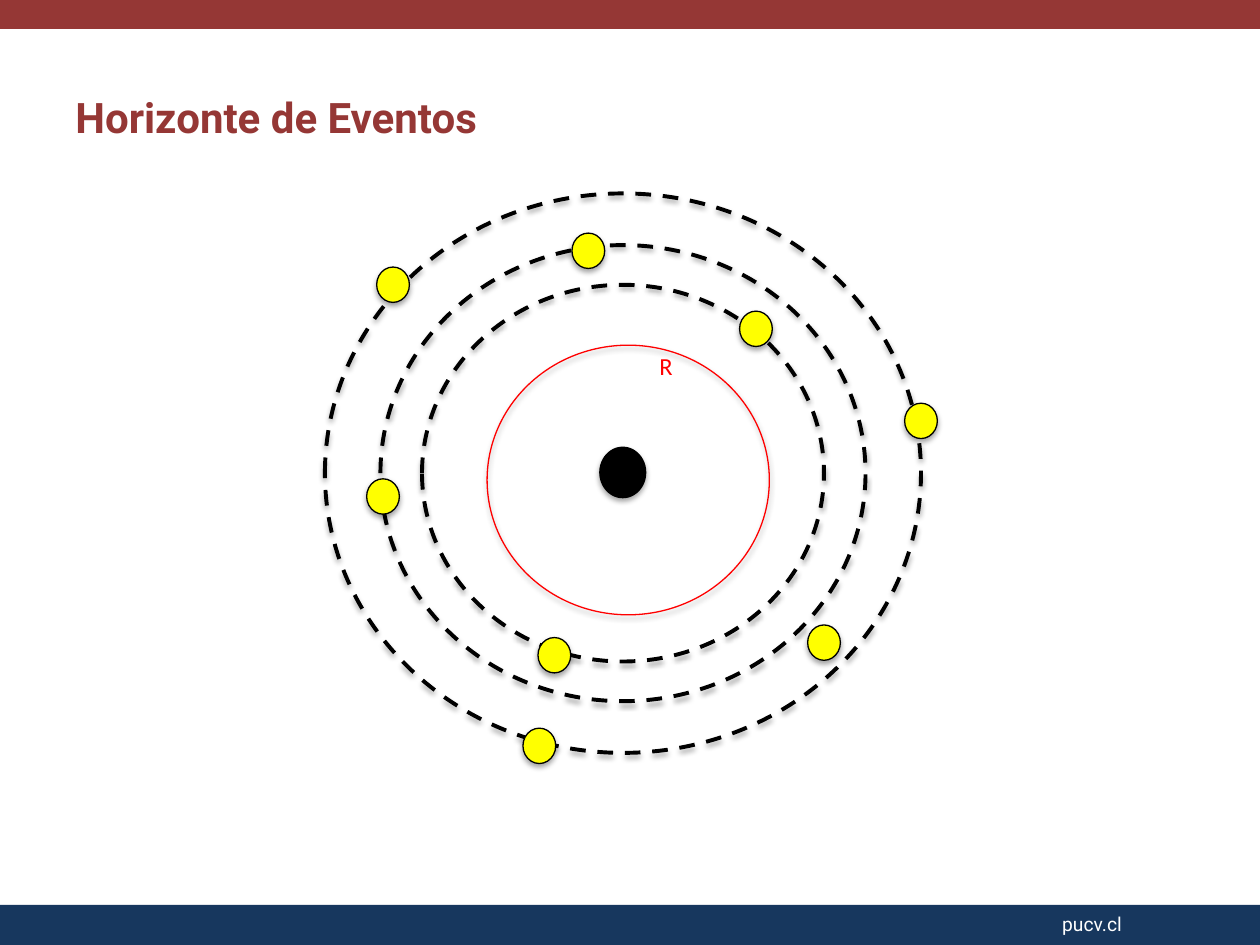
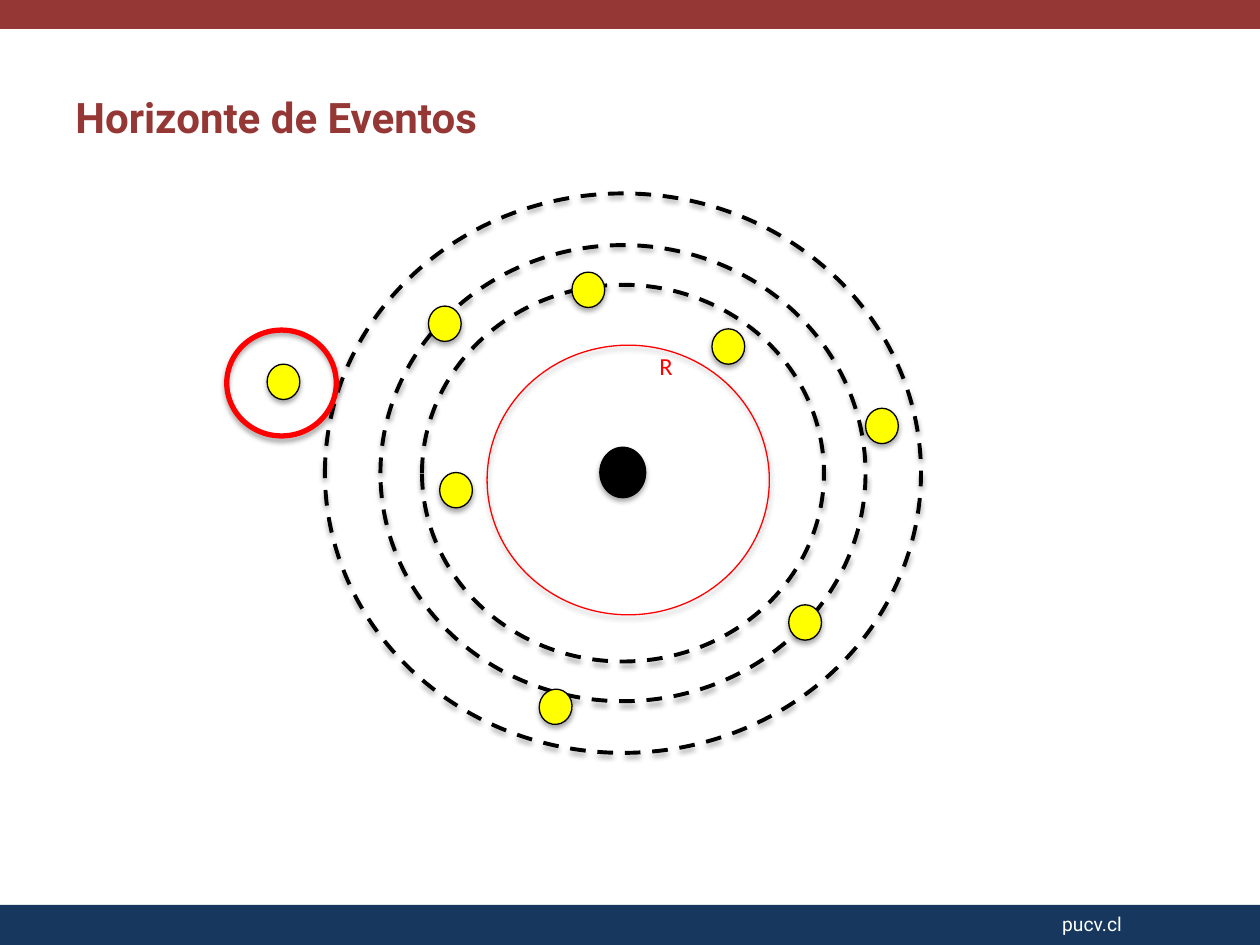
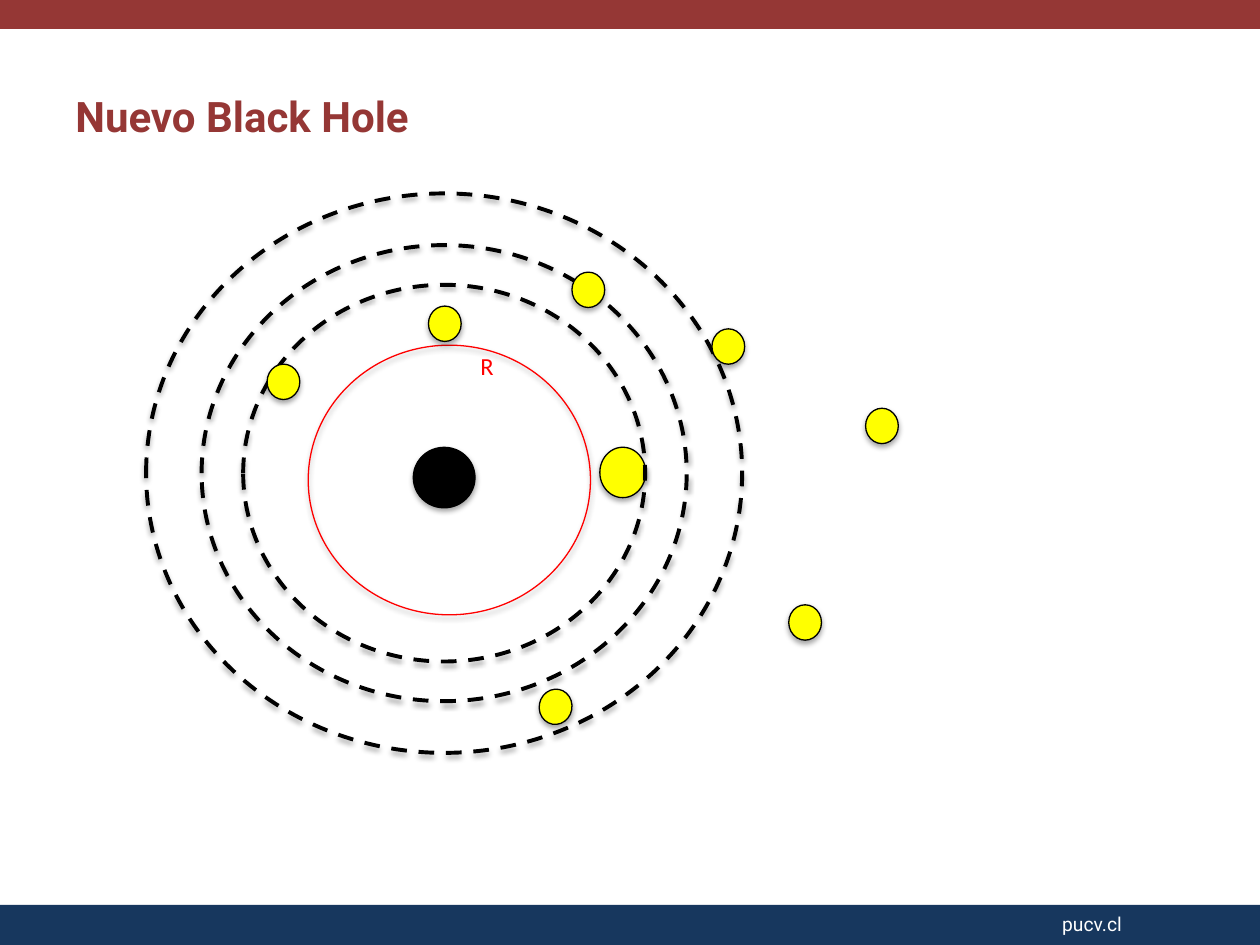
from lxml import etree
from pptx import Presentation
from pptx.dml.color import RGBColor
from pptx.enum.dml import MSO_LINE
from pptx.enum.shapes import MSO_SHAPE
from pptx.enum.text import PP_ALIGN
from pptx.oxml.ns import qn
from pptx.util import Pt

RECT, OVAL = MSO_SHAPE.RECTANGLE, MSO_SHAPE.OVAL
DASH = MSO_LINE.DASH
LEFT, CENTER = PP_ALIGN.LEFT, PP_ALIGN.CENTER

COLORS = {
    "maroon": "953735", "navy": "17375E", "white": "FFFFFF",
    "black": "000000", "red": "FF0000", "yellow": "FFFF00",
}
RGB = {name: RGBColor.from_string(value) for name, value in COLORS.items()}

STAR = (18.7, 20.2)
HOLE = (26.2, 28.8)
HOLE_CENTER = (355.9, 270)
HORIZON_CENTER = (359, 274.3)
HORIZON = (161.3, 154.1)
ORBIT_CENTER = (356, 270.4)
ORBITS = [(229.7, 215.3), (277.2, 260.6), (340.6, 319.7)]
NEW_HOLE_SHIFT = -102.2

# Star centres, with rotation where a star is turned
stars_before = [
    (224.6, 162.7, 0), (470.9, 367.2, 0), (526.3, 240.5, 0), (308.2, 426.2, 0),
    (336.2, 143.3, 0), (218.9, 283.7, 0), (432, 187.9, 0), (316.8, 374.4, 0),
]
stars_moved = [
    (254.2, 185, 0), (460.1, 355.7, 0), (504, 243.4, 0), (317.5, 403.9, 10.6),
    (336.2, 165.6, 0), (416.2, 198, 0), (162, 218.2, 0),
]
star_near_horizon = (260.6, 280.1, 0)

# Title, title top, shift of the orbits, colour of the central body, stars
slides = [
    ("Horizonte de Eventos", 49, 0, "black", stars_before),
    ("Horizonte de Eventos", 49, 0, "black", stars_moved + [star_near_horizon]),
    ("Nuevo Black Hole", 48.2, NEW_HOLE_SHIFT, "yellow", stars_moved),
]


def add_oval(shapes, center, size, line, fill=None, weight=0.75, dash=None):
    (cx, cy), (w, h) = center, size
    sp = shapes.add_shape(OVAL, Pt(cx - w / 2), Pt(cy - h / 2), Pt(w), Pt(h))
    if fill:
        sp.fill.solid()
        sp.fill.fore_color.rgb = RGB[fill]
    else:
        sp.fill.background()
    sp.line.color.rgb = RGB[line]
    sp.line.width = Pt(weight)
    if dash:
        sp.line.dash_style = dash
    # Soft shadow straight below
    sp.shadow.inherit = False
    effects = sp._element.spPr.find(qn("a:effectLst"))
    shadow = etree.SubElement(effects, qn("a:outerShdw"), blurRad=str(Pt(3.1)),
                              dist=str(Pt(1.8)), dir="5400000", rotWithShape="0")
    color = etree.SubElement(shadow, qn("a:srgbClr"), val=COLORS["black"])
    etree.SubElement(color, qn("a:alpha"), val="35000")
    return sp


def add_text(shapes, box, text, font, size, color, bold=False, align=LEFT, wrap=True):
    tf = shapes.add_textbox(*map(Pt, box)).text_frame
    tf.word_wrap = wrap
    p = tf.paragraphs[0]
    p.text = text
    p.alignment = align
    r = p.runs[0]
    r.font.name = font
    r.font.size = Pt(size)
    r.font.bold = bold
    r.font.color.rgb = RGB[color]


prs = Presentation()
prs.slide_width, prs.slide_height = Pt(720), Pt(540)

for number, (title, title_top, shift, body_color, stars) in enumerate(slides, 1):
    s = prs.slides.add_slide(prs.slide_layouts[6])

    # Bands and footer
    for top, height, color in [(517, 23, "navy"), (0, 16.5, "maroon")]:
        sp = s.shapes.add_shape(RECT, 0, Pt(top), Pt(720), Pt(height))
        sp.fill.solid()
        sp.fill.fore_color.rgb = RGB[color]
        sp.line.fill.background()
        sp.shadow.inherit = False
    add_text(s.shapes, (599.8, 517.7, 120, 22), "pucv.cl", "Roboto", 11, "white")

    # Central body
    add_oval(s.shapes, HOLE_CENTER, HOLE, "black", body_color)

    # Event horizon and orbits, grouped where they move together
    system = s.shapes.add_group_shape().shapes if shift else s.shapes
    add_oval(system, (HORIZON_CENTER[0] + shift, HORIZON_CENTER[1]), HORIZON, "red")
    add_text(system, (369.4 + shift, 197.3, 22.3, 36), "R", "Calibri", 14, "red",
             align=CENTER, wrap=False)
    for orbit in ORBITS:
        add_oval(system, (ORBIT_CENTER[0] + shift, ORBIT_CENTER[1]), orbit, "black",
                 weight=2.25, dash=DASH)

    # Stars
    for cx, cy, angle in stars:
        sp = add_oval(s.shapes, (cx, cy), STAR, "black", "yellow")
        sp.rotation = angle

    # Escaping star marked, then the new black hole
    if number == 2:
        add_oval(s.shapes, (160.9, 218.9), (62.6, 60.5), "red", weight=3)
    elif number == 3:
        add_oval(s.shapes, (253.8, 272.9), (35.3, 34.6), "black", "black")

    # Title
    add_text(s.shapes, (36, title_top, 648, 31), title, "Roboto", 24, "maroon", bold=True)

prs.save("out.pptx")
